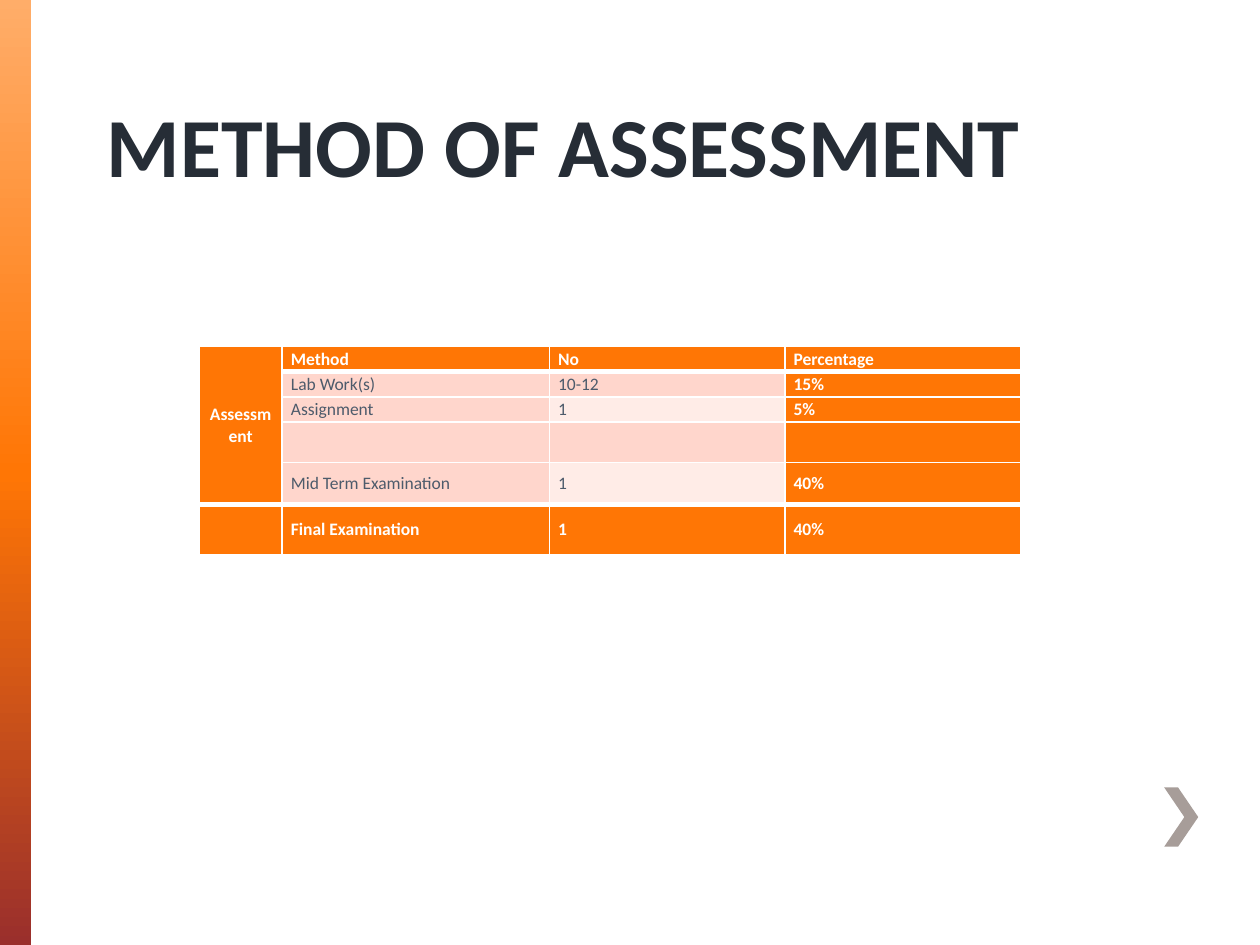
from copy import deepcopy

from lxml import etree
from pptx import Presentation
from pptx.dml.color import RGBColor
from pptx.enum.shapes import MSO_SHAPE
from pptx.enum.text import MSO_ANCHOR, PP_ALIGN
from pptx.oxml.ns import qn
from pptx.util import Inches, Pt

RECTANGLE = MSO_SHAPE.RECTANGLE
BOTTOM, MIDDLE = MSO_ANCHOR.BOTTOM, MSO_ANCHOR.MIDDLE
LEFT, CENTER = PP_ALIGN.LEFT, PP_ALIGN.CENTER

ORANGE, PINK, PALE, WHITE = "FF7605", "FFD6CC", "FFECE7", "FFFFFF"
SLATE, NAVY, TAUPE = "4D5B6B", "262D36", "A79D99"
BAR_GRADIENTS = [
    [(0, "FF7605"), (0.52, "9A2F2C"), (1, "661F1E")],
    [(0, "FFAD69"), (0.5, "FF7605"), (1, "9A2F2C")],
]
COLUMN_WIDTHS = [0.66, 2.12, 1.87, 1.87]
ROW_HEIGHTS = [0.2, 0.2, 0.2, 0.32, 0.33, 0.4]
ROWS = [
    ["Assessment", "Method", "No", "Percentage"],
    ["", "Lab Work(s)", "10-12", "15%"],
    ["", "Assignment", "1", "5%"],
    ["", "", "", ""],
    ["", "Mid Term Examination", "1", "40%"],
    ["", "Final Examination", "1", "40%"],
]
LAST_ROW, LAST_COLUMN = len(ROWS) - 1, len(COLUMN_WIDTHS) - 1


def rgb(code):
    """Turn a hex string into a colour."""
    return RGBColor.from_string(code)


def write(frame, text, size=10, color=WHITE, bold=True, align=LEFT):
    """Put one formatted paragraph into a text frame."""
    para = frame.paragraphs[0]
    para.alignment = align
    target = para
    if text:
        target = para.add_run()
        target.text = text
    font = target.font
    font.name, font.size, font.bold = "Calibri", Pt(size), bold
    font.color.rgb = rgb(color)


def add_side_bar(page, left, top, width, height):
    """Draw the layered vertical gradient bar."""
    for gradient in BAR_GRADIENTS:
        bar = page.shapes.add_shape(
            RECTANGLE, Inches(left), Inches(top), Inches(width), Inches(height))
        bar.shadow.inherit = False
        bar.line.fill.background()
        bar.fill.gradient()
        bar.fill.gradient_angle = 270
        stop_list = next(bar.element.iter(qn("a:gsLst")))
        stop_list.append(deepcopy(stop_list[-1]))
        for stop, (position, color) in zip(bar.fill.gradient_stops, gradient):
            stop.position = position
            stop.color.rgb = rgb(color)


def add_chevron(page, left, top, width, height):
    """Draw the arrow-like corner mark."""
    arm = 0.11
    right, middle, bottom = left + width, top + height / 2, top + height
    points = [(left + arm, top), (left, top), (right - arm, middle),
              (left, bottom), (left + arm, bottom), (right, middle)]
    corners = [(Inches(x), Inches(y)) for x, y in points]
    builder = page.shapes.build_freeform(*corners[0])
    builder.add_line_segments(corners[1:], close=True)
    chevron = builder.convert_to_shape()
    chevron.shadow.inherit = False
    chevron.fill.solid()
    chevron.fill.fore_color.rgb = rgb(TAUPE)
    chevron.line.fill.background()


def add_title(page, left, top, width, height):
    """Place the slide title."""
    box = page.shapes.add_textbox(
        Inches(left), Inches(top), Inches(width), Inches(height))
    frame = box.text_frame
    frame.word_wrap = True
    frame.vertical_anchor = BOTTOM
    frame.margin_bottom = 0
    write(frame, "METHOD OF ASSESSMENT", size=48, color=NAVY)


def set_borders(cell, **widths):
    """Give a cell white borders with widths in points by side."""
    properties = cell._tc.get_or_add_tcPr()
    for index, side in enumerate("LRTB"):
        line = etree.Element(qn(f"a:ln{side}"), w=str(Pt(widths.get(side, 1))))
        fill = etree.SubElement(line, qn("a:solidFill"))
        etree.SubElement(fill, qn("a:srgbClr"), val=WHITE)
        properties.insert(index, line)


def cell_fill(row, column):
    """Choose a fill by the cell's place in the table."""
    if row in (0, LAST_ROW) or column in (0, LAST_COLUMN):
        return ORANGE
    return PALE if column == 2 and row % 2 == 0 else PINK


def add_assessment_table(page, left, top, width, height):
    """Build the table of assessment methods."""
    table = page.shapes.add_table(
        len(ROWS), len(COLUMN_WIDTHS),
        Inches(left), Inches(top), Inches(width), Inches(height)).table
    for column, size in zip(table.columns, COLUMN_WIDTHS):
        column.width = Inches(size)
    for row, size in zip(table.rows, ROW_HEIGHTS):
        row.height = Inches(size)
    for r, texts in enumerate(ROWS):
        for c, text in enumerate(texts):
            cell = table.cell(r, c)
            fill = cell_fill(r, c)
            cell.vertical_anchor = MIDDLE
            cell.margin_left = cell.margin_right = Inches(0.07)
            cell.margin_top = cell.margin_bottom = 0
            cell.fill.solid()
            cell.fill.fore_color.rgb = rgb(fill)
            strong = fill == ORANGE
            write(cell.text_frame, text, bold=strong,
                  color=WHITE if strong else SLATE,
                  align=LEFT if c else CENTER)
            below = r == LAST_ROW - 1 or (r == 0 or c == 0) and r < LAST_ROW
            above = r == LAST_ROW or r == 1 and c > 0
            set_borders(cell, T=3 if above else 1, B=3 if below else 1)
    table.cell(0, 0).merge(table.cell(LAST_ROW - 1, 0))


def main():
    """Build and save the deck."""
    deck = Presentation()
    deck.slide_width, deck.slide_height = Inches(10), Inches(7.5)
    page = deck.slides.add_slide(deck.slide_layouts[6])
    add_side_bar(page, 0, 0, 0.25, 7.5)
    add_chevron(page, 9.24, 6.25, 0.27, 0.47)
    add_title(page, 0.75, 0.5, 8.52, 1.04)
    add_assessment_table(
        page, 1.58, 2.75, sum(COLUMN_WIDTHS), sum(ROW_HEIGHTS))
    deck.save("out.pptx")


if __name__ == "__main__":
    main()
